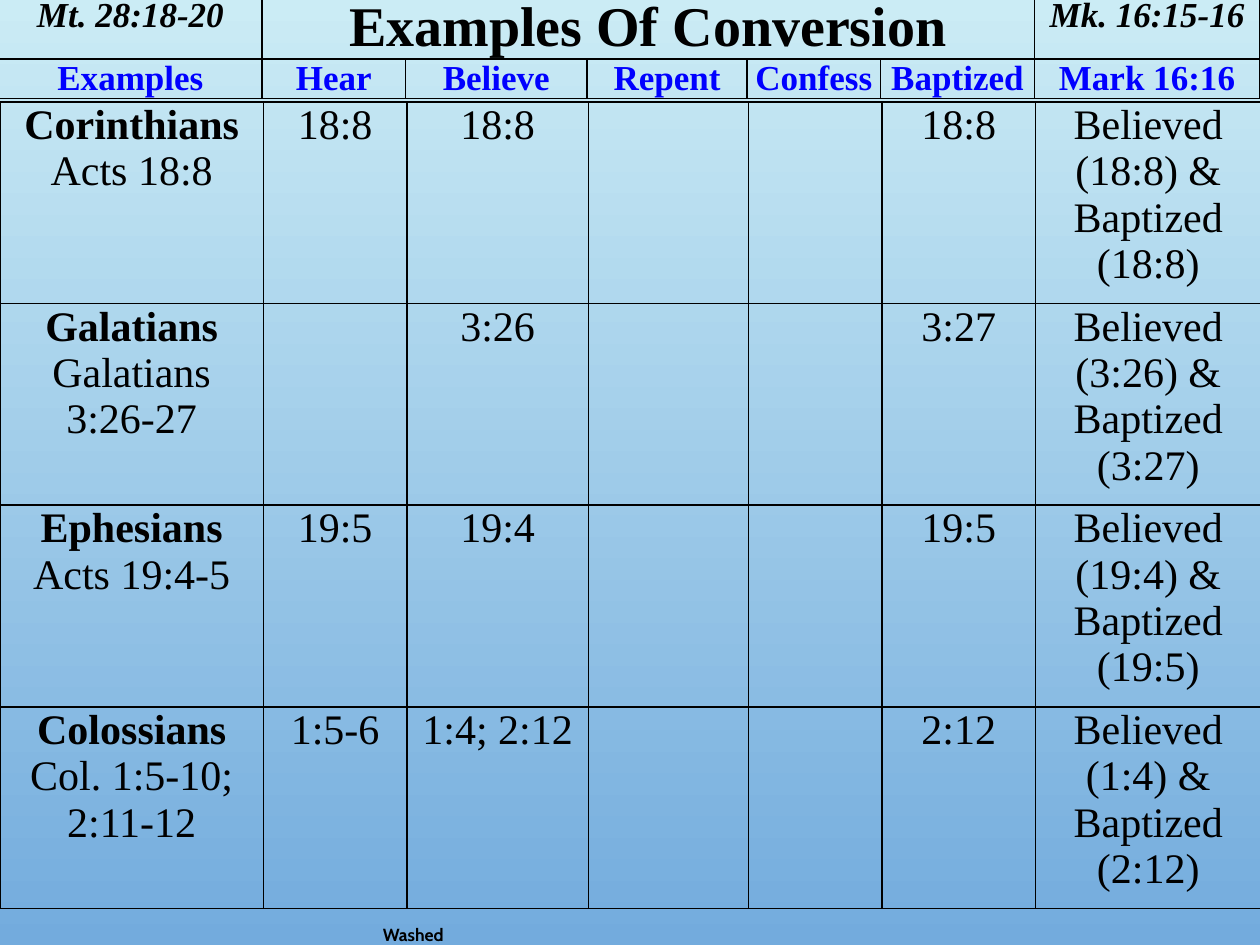
import pptx
import pptx.util
import pptx.dml.color
import pptx.enum.text
import pptx.oxml
import pptx.oxml.ns

Inches = pptx.util.Inches
Pt = pptx.util.Pt

COLORS = {"top": "CBECF5", "base": "73ABDD", "ink": "000000", "head": "0000FF"}
SERIF = "Times New Roman"
COLS = [2.09, 1.14, 1.44, 1.27, 1.06, 1.22, 1.79]
HEADS = ["Examples", "Hear", "Believe", "Repent", "Confess", "Baptized", "Mark 16:16"]
CASES = [
    ["Corinthians\nActs 18:8", "18:8", "18:8", "", "", "18:8",
     "Believed (18:8) & Baptized (18:8)"],
    ["Galatians\nGalatians 3:26-27", "", "3:26", "", "", "3:27",
     "Believed (3:26) & Baptized (3:27)"],
    ["Ephesians\nActs 19:4-5", "19:5", "19:4", "", "", "19:5",
     "Believed (19:4) & Baptized (19:5)"],
    ["Colossians\nCol. 1:5-10; 2:11-12", "1:5-6", "1:4; 2:12", "", "", "2:12",
     "Believed (1:4) & Baptized (2:12)"],
]


def rgb(name):
    return pptx.dml.color.RGBColor.from_string(COLORS[name])


def style(para, size, bold=False, italic=False, color="ink", face=SERIF):
    for run in para.runs:
        font = run.font
        font.name, font.size = face, Pt(size)
        font.bold, font.italic = bold, italic
        font.color.rgb = rgb(color)


def frame(cell, pad):
    """Clear the fill, set the side margins and draw black borders."""
    cell.fill.background()
    cell.margin_left = cell.margin_right = Inches(pad)
    cell.margin_top = cell.margin_bottom = 0
    props = cell._tc.get_or_add_tcPr()
    for spot, side in enumerate(["lnL", "lnR", "lnT", "lnB"]):
        props.insert(spot, pptx.oxml.parse_xml(
            f'<a:{side} {pptx.oxml.ns.nsdecls("a")} w="{Pt(1)}"><a:solidFill>'
            f'<a:srgbClr val="{COLORS["ink"]}"/></a:solidFill></a:{side}>'))


def write(cell, text, size, **look):
    cell.text_frame.text = text
    for para in cell.text_frame.paragraphs:
        para.alignment = pptx.enum.text.PP_ALIGN.CENTER
        style(para, size, **look)


def add_grid(slide, left, top, rows, pad):
    """Add a plain bordered table with the shared columns."""
    shape = slide.shapes.add_table(len(rows), len(COLS), Inches(left), Inches(top),
                                   Inches(sum(COLS)), Inches(sum(rows)))
    table = shape.table
    table.first_row = table.horz_banding = False
    for col, width in zip(table.columns, COLS):
        col.width = Inches(width)
    for row, height in zip(table.rows, rows):
        row.height = Inches(height)
    for cell in table.iter_cells():
        frame(cell, pad)
    return table


def add_head(slide, left, top):
    table = add_grid(slide, left, top, [0.5, 0.31], 0.05)
    table.cell(0, 1).merge(table.cell(0, 5))
    write(table.cell(0, 0), "Mt. 28:18-20", 20, bold=True, italic=True)
    write(table.cell(0, 1), "Examples Of Conversion", 32, bold=True)
    write(table.cell(0, 6), "Mk. 16:15-16", 20, bold=True, italic=True)
    for col, text in enumerate(HEADS):
        write(table.cell(1, col), text, 20, bold=True, color="head")


def add_case(slide, left, top, texts):
    table = add_grid(slide, left, top, [1.48], 0.07)
    for col, text in enumerate(texts):
        write(table.cell(0, col), text, 24)
    style(table.cell(0, 0).text_frame.paragraphs[0], 24, bold=True)


def add_note(slide, left, top, width, height):
    box = slide.shapes.add_textbox(Inches(left), Inches(top), Inches(width), Inches(height))
    text = box.text_frame
    text.word_wrap = True
    text.vertical_anchor = pptx.enum.text.MSO_ANCHOR.MIDDLE
    text.text = "Washed"
    style(text.paragraphs[0], 10, bold=True, face="Cabin")


def paint(slide):
    fill = slide.background.fill
    fill.gradient()
    fill.gradient_angle = 270
    for stop, name, place in zip(fill.gradient_stops, ["top", "base"], [0, 1]):
        stop.color.rgb = rgb(name)
        stop.position = place


def main():
    deck = pptx.Presentation()
    deck.slide_width, deck.slide_height = Inches(10), Inches(7.5)
    slide = deck.slides.add_slide(deck.slide_layouts[6])
    paint(slide)
    add_head(slide, -0.01, -0.03)
    add_note(slide, 2.94, 7.33, 4.08, 0.17)
    for row, texts in enumerate(CASES):
        add_case(slide, 0, 0.81 + 1.6 * row, texts)
    deck.save("out.pptx")


if __name__ == "__main__":
    main()
